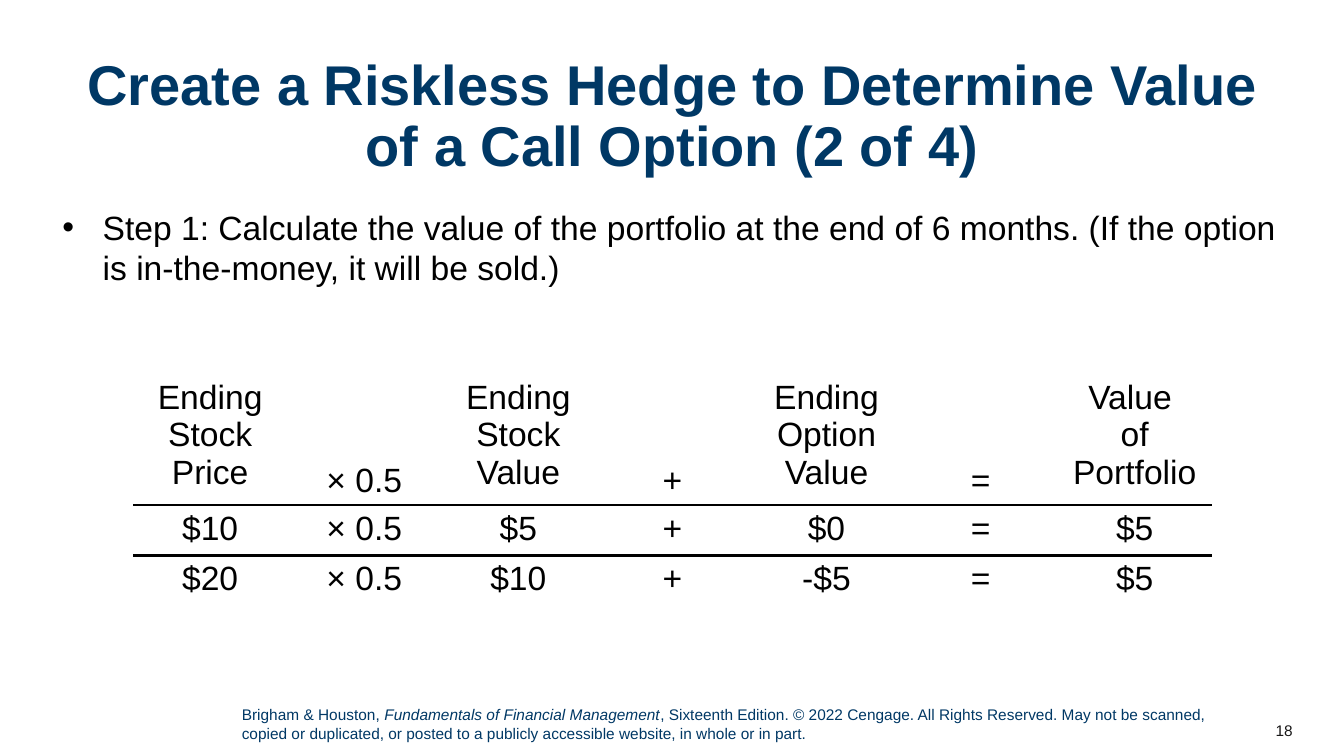
from dataclasses import dataclass

from lxml.etree import SubElement
from pptx import Presentation
from pptx.dml.color import RGBColor
from pptx.enum.text import MSO_ANCHOR as Anchor, PP_ALIGN as Align
from pptx.oxml.ns import qn
from pptx.util import Inches, Pt


@dataclass(frozen=True)
class Theme:
    font: str = "Arial"
    navy: str = "003865"
    black: str = "000000"
    number: str = "181717"
    title_size: int = 40
    body_size: int = 24
    small_size: int = 11
    rule_width: float = 2.25


@dataclass(frozen=True)
class Column:
    header: str
    values: tuple[str, str]
    anchor: Anchor = Anchor.TOP


THEME = Theme()
PLAIN_TABLE = "{2D5ABB26-0587-4C30-8999-92F81FD0307C}"
COLUMNS = [
    Column("Ending Stock Price", ("$10", "$20")),
    Column("× 0.5", ("× 0.5", "× 0.5"), Anchor.BOTTOM),
    Column("Ending Stock Value", ("$5", "$10")),
    Column("+", ("+", "+"), Anchor.BOTTOM),
    Column("Ending Option Value", ("$0", "-$5")),
    Column("=", ("=", "="), Anchor.BOTTOM),
    Column("Value \vof Portfolio", ("$5", "$5")),
]


def write(tf, *texts: str, size: float = THEME.body_size, color: str = THEME.black,
          bold: bool = False, italic_run: int = -1, align: Align = Align.LEFT):
    """Fill the first paragraph with one run per text; return the paragraph."""
    p = tf.paragraphs[0]
    p.alignment = align
    for i, text in enumerate(texts):
        for j, part in enumerate(text.split("\v")):
            if j:
                p.add_line_break()
            r = p.add_run()
            r.text = part
            r.font.name = THEME.font
            r.font.size = Pt(size)
            r.font.bold = bold
            r.font.italic = i == italic_run
            r.font.color.rgb = RGBColor.from_string(color)
    return p


def add_box(slide, left: float, top: float, width: float, height: float,
            anchor: Anchor = Anchor.TOP):
    box = slide.shapes.add_textbox(*map(Inches, (left, top, width, height)))
    tf = box.text_frame
    tf.word_wrap = True
    tf.vertical_anchor = anchor
    return tf


def add_bullet(p, indent: float) -> None:
    pPr = p._p.get_or_add_pPr()
    pPr.set("marL", str(Inches(indent)))
    pPr.set("indent", str(-Inches(indent)))
    color = SubElement(pPr, qn("a:buClr"))
    SubElement(color, qn("a:srgbClr"), val=THEME.black)
    SubElement(pPr, qn("a:buFont"), typeface=THEME.font)
    SubElement(pPr, qn("a:buChar"), char="•")


def add_border(cell, side: str) -> None:
    tcPr = cell._tc.get_or_add_tcPr()
    line = SubElement(tcPr, qn(f"a:ln{side}"), w=str(Pt(THEME.rule_width)))
    fill = SubElement(line, qn("a:solidFill"))
    SubElement(fill, qn("a:srgbClr"), val=THEME.black)


def add_payoff_table(slide) -> None:
    frame = slide.shapes.add_table(3, len(COLUMNS), *map(Inches, (1.32, 3.71, 10.7, 2.3)))
    table = frame.table
    table.first_row = table.horz_banding = False
    table._tbl.tblPr.find(qn("a:tableStyleId")).text = PLAIN_TABLE
    for row, height in zip(table.rows, (1.3, 0.4, 0.4)):
        row.height = Inches(height)
    for c, column in enumerate(COLUMNS):
        table.columns[c].width = Inches(10.7 / len(COLUMNS))
        for r, text in enumerate((column.header, *column.values)):
            cell = table.cell(r, c)
            write(cell.text_frame, text, align=Align.CENTER)
            # Rule between the header and the first row
            if r < 2:
                add_border(cell, "BT"[r])
            cell.fill.background()
        table.cell(0, c).vertical_anchor = column.anchor


def main() -> None:
    prs = Presentation()
    prs.slide_width, prs.slide_height = Inches(13.33), Inches(7.5)
    slide = prs.slides.add_slide(prs.slide_layouts[6])

    # Slide number and copyright line
    write(add_box(slide, 12.12, 7.05, 0.8, 0.4, Anchor.MIDDLE), "18",
          size=THEME.small_size, color=THEME.number, align=Align.RIGHT)
    write(add_box(slide, 2.3, 6.95, 9.8, 0.47),
          "Brigham & Houston, ",
          "Fundamentals of Financial Management",
          ", Sixteenth Edition. © 2022 Cengage. All Rights Reserved. May not be scanned, "
          "copied or duplicated, or posted to a publicly accessible website, "
          "in whole or in part.",
          size=THEME.small_size, color=THEME.navy, italic_run=1)

    # Title
    p = write(add_box(slide, 0.52, 0.52, 12.29, 1.33),
              "Create a Riskless Hedge to Determine Value of a Call Option (2 of 4)",
              size=THEME.title_size, color=THEME.navy, bold=True, align=Align.CENTER)
    p.line_spacing = 0.9

    # Step description
    p = write(add_box(slide, 0.52, 2, 12.29, 1.06),
              "Step 1: Calculate the value of the portfolio at the end of 6 months. "
              "(If the option is in-the-money, it will be sold.)")
    add_bullet(p, 0.4)
    p.space_after = Pt(8)

    # Portfolio value table
    add_payoff_table(slide)

    prs.save("out.pptx")


if __name__ == "__main__":
    main()
